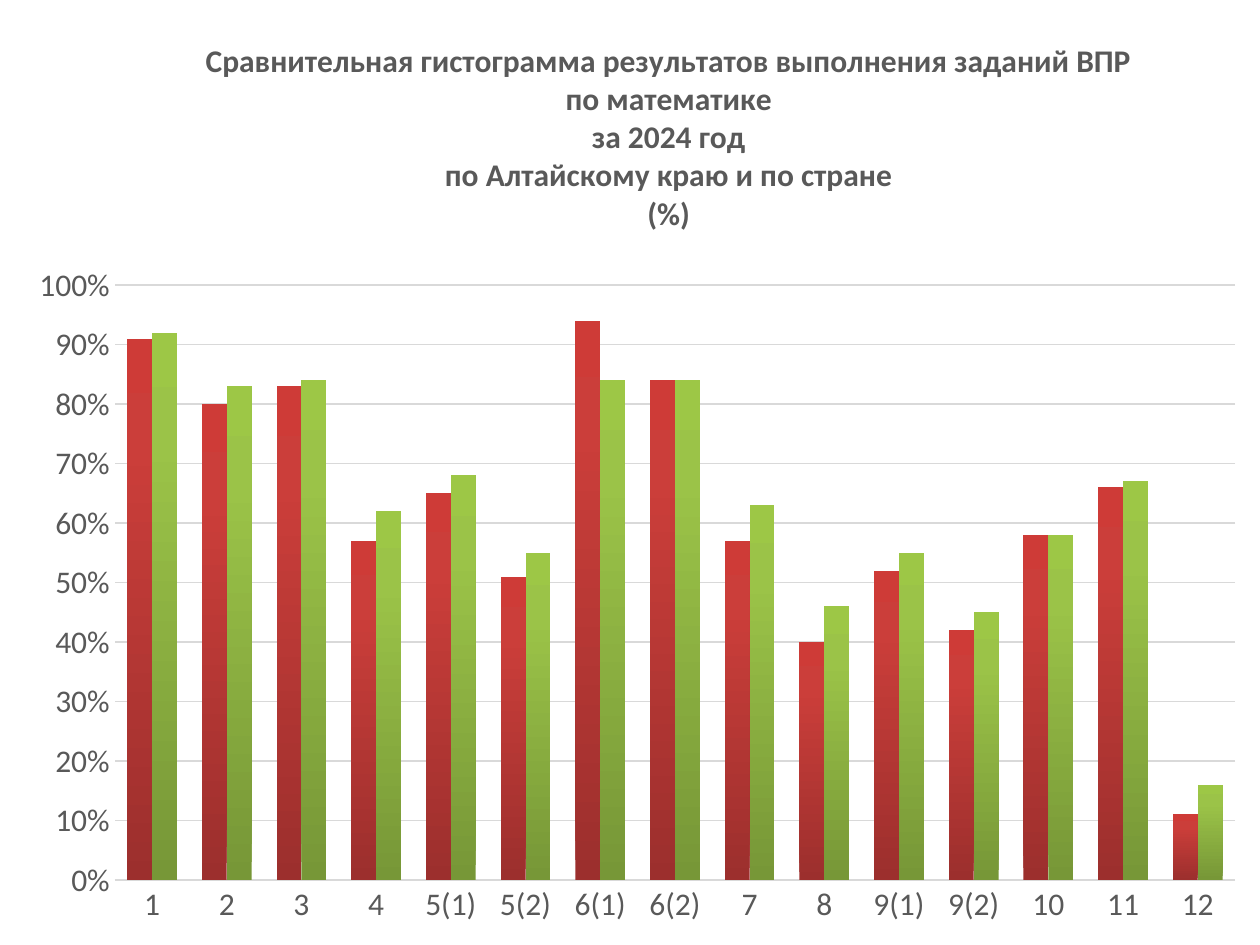
from copy import deepcopy

from pptx import Presentation
from pptx.chart.data import CategoryChartData
from pptx.dml.color import RGBColor
from pptx.enum.chart import XL_CHART_TYPE as ChartType, XL_TICK_MARK as TickMark
from pptx.enum.text import PP_ALIGN as Align
from pptx.oxml import parse_xml
from pptx.oxml.ns import nsdecls, qn
from pptx.util import Inches, Pt

FONT = "Calibri"
COLORS = {
    "text": "595959",
    "grid": "D9D9D9",
    "region": ("9C2F2D", "CB3E3A", "CE3B37"),
    "country": ("779737", "9BC348", "9DC746"),
}
GRADIENT_STOPS = (0, 0.8, 1)

TITLE_LINES = [
    "Сравнительная гистограмма результатов выполнения заданий ВПР",
    "по математике",
    "за 2024 год",
    "по Алтайскому краю и по стране",
    "(%)",
]
TASKS = ["1", "2", "3", "4", "5(1)", "5(2)", "6(1)", "6(2)",
         "7", "8", "9(1)", "9(2)", "10", "11", "12"]
RESULTS = {
    "region": [0.91, 0.8, 0.83, 0.57, 0.65, 0.51, 0.94, 0.84,
               0.57, 0.4, 0.52, 0.42, 0.58, 0.66, 0.11],
    "country": [0.92, 0.83, 0.84, 0.62, 0.68, 0.55, 0.84, 0.84,
                0.63, 0.46, 0.55, 0.45, 0.58, 0.67, 0.16],
}


def rgb(name):
    return RGBColor.from_string(COLORS[name])


def style_font(font, size=18, color="text", bold=False):
    font.name = FONT
    font.size = Pt(size)
    font.bold = bold
    font.color.rgb = rgb(color)


def write_line(paragraph, text, align=Align.CENTER, **font_format):
    paragraph.alignment = align
    run = paragraph.add_run()
    run.text = text
    style_font(run.font, **font_format)


def style_line(line, color, width):
    line.color.rgb = rgb(color)
    line.width = Pt(width)


def place(element, index, target="", **fractions):
    """Give a chart part a manual layout in fractions of the chart area."""
    for old in element.findall(qn("c:layout")):
        element.remove(old)
    modes = "".join(f'<c:{axis}Mode val="edge"/>' for axis in "xy")
    sizes = "".join(f'<c:{key} val="{value}"/>' for key, value in fractions.items())
    element.insert(index, parse_xml(
        f'<c:layout {nsdecls("c")}><c:manualLayout>{target}{modes}{sizes}'
        "</c:manualLayout></c:layout>"))


def fill_gradient(series, shades):
    """Fill the bars from bottom to top with three shades."""
    fill = series.format.fill
    fill.gradient()
    fill.gradient_angle = 90
    first_stop = next(series._element.iter(qn("a:gs")))
    first_stop.addnext(deepcopy(first_stop))
    for stop, position, shade in zip(fill.gradient_stops, GRADIENT_STOPS, shades):
        stop.position = position
        stop.color.rgb = RGBColor.from_string(shade)


def add_title(chart):
    title = chart.chart_title
    frame = title.text_frame
    for number, text in enumerate(TITLE_LINES):
        paragraph = frame.add_paragraph() if number else frame.paragraphs[0]
        write_line(paragraph, text, bold=True)
    place(title._element, 1, x=0.15, y=0.02)


def style_axes(chart):
    tasks, percent = chart.category_axis, chart.value_axis
    for axis in (tasks, percent):
        axis.major_tick_mark = axis.minor_tick_mark = TickMark.NONE
        style_font(axis.tick_labels.font)
    style_line(tasks.format.line, "grid", 1)
    percent.format.line.fill.background()
    percent.minimum_scale, percent.maximum_scale, percent.major_unit = 0, 1, 0.1
    percent.tick_labels.number_format = "0%"
    percent.tick_labels.number_format_is_linked = False
    style_line(percent.major_gridlines.format.line, "grid", 0.75)


def add_results_chart(slide):
    data = CategoryChartData(number_format="0%")
    data.categories = TASKS
    for number, values in enumerate(RESULTS.values(), start=1):
        data.add_series(f"Series {number}", values)
    chart = slide.shapes.add_chart(
        ChartType.COLUMN_CLUSTERED, Inches(0.12), Inches(0.14),
        Inches(9.88), Inches(7.32), data).chart
    chart.has_legend = False
    chart.font.name = FONT
    chart.font.size = Pt(10)
    add_title(chart)
    style_axes(chart)

    bars = chart.plots[0]
    bars.gap_width = 100
    bars.overlap = 0
    bars.vary_by_categories = False
    for series, name in zip(bars.series, RESULTS):
        fill_gradient(series, COLORS[name])
    plot_area = chart._chartSpace.find(f'{qn("c:chart")}/{qn("c:plotArea")}')
    place(plot_area, 0, '<c:layoutTarget val="inner"/>', x=0.08, y=0.29, w=0.9, h=0.645)


def main():
    deck = Presentation()
    deck.slide_width, deck.slide_height = Inches(10), Inches(7.5)
    slide = deck.slides.add_slide(deck.slide_layouts[6])
    add_results_chart(slide)
    deck.save("out.pptx")


if __name__ == "__main__":
    main()
